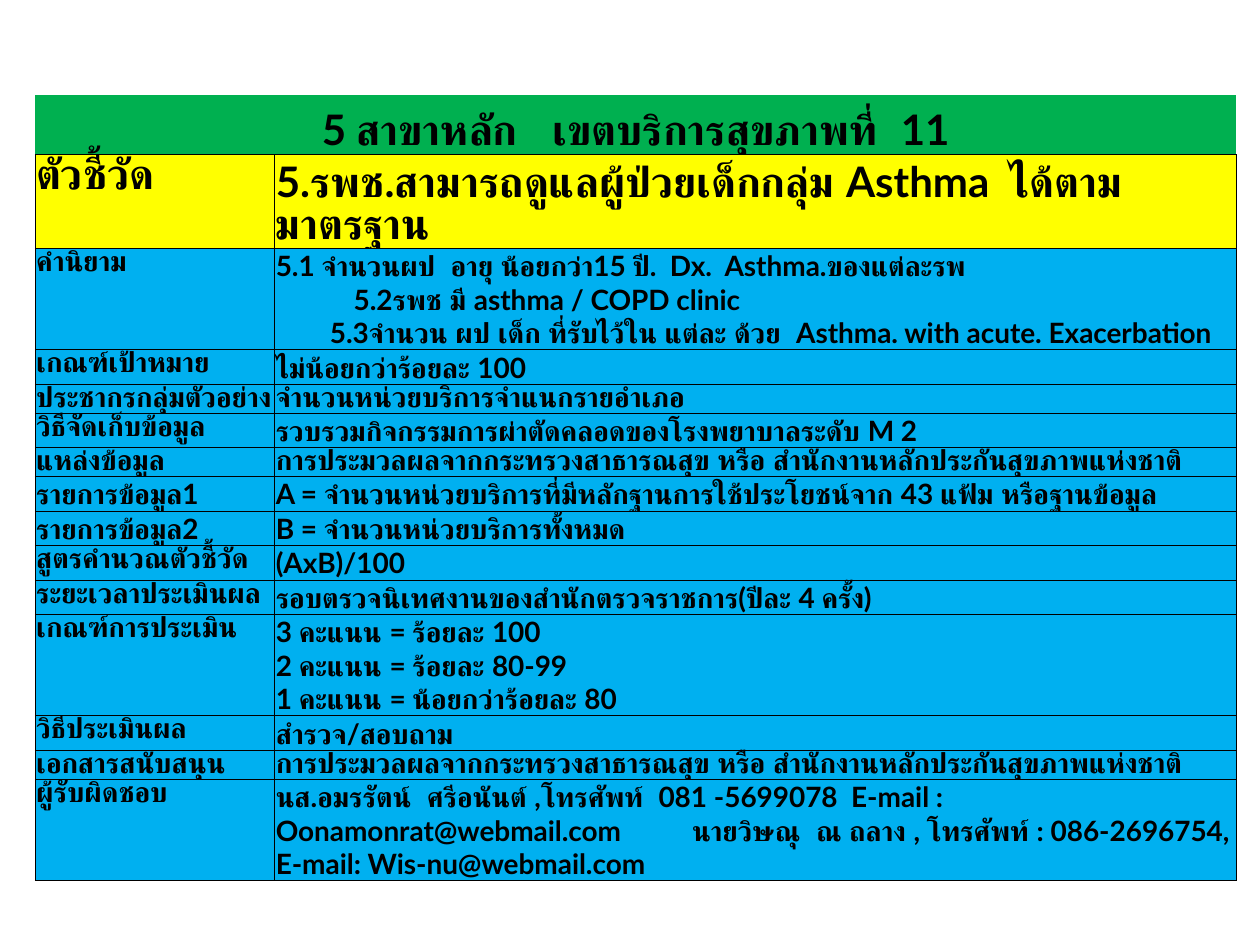
import pptx
import pptx.dml.color
import pptx.enum.text
import pptx.util
from lxml import etree
from pptx.oxml.ns import qn
from pptx.util import Cm, Pt

TITLE = "5 สาขาหลัก   เขตบริการสุขภาพที่  11"
SOURCE = "การประมวลผลจากกระทรวงสาธารณสุข หรือ สำนักงานหลักประกันสุขภาพแห่งชาติ"
GREEN, YELLOW, BLUE = "00B050", "FFFF00", "00B0F0"

# Label, lines of text, row height in cm
ROWS = [
    ("ตัวชี้วัด", ["5.รพช.สามารถดูแลผู้ป่วยเด็กกลุ่ม Asthma  ได้ตามมาตรฐาน"], 1.42),
    ("คำนิยาม", ["5.1 จำนวนผป  อายุ น้อยกว่า15 ปี.  Dx.  Asthma.ของแต่ละรพ",
                 "5.2รพช มี asthma / COPD clinic",
                 "5.3จำนวน ผป เด็ก ที่รับไว้ใน แต่ละ ด้วย  Asthma. with acute. Exacerbation"], 1.7),
    ("เกณฑ์เป้าหมาย", ["ไม่น้อยกว่าร้อยละ 100"], 0.56),
    ("ประชากรกลุ่มตัวอย่าง", ["จำนวนหน่วยบริการจำแนกรายอำเภอ"], 0.56),
    ("วิธีจัดเก็บข้อมูล", ["รวบรวมกิจกรรมการผ่าตัดคลอดของโรงพยาบาลระดับ M 2"], 0.56),
    ("แหล่งข้อมูล", [SOURCE], 0.56),
    ("รายการข้อมูล1", ["A = จำนวนหน่วยบริการที่มีหลักฐานการใช้ประโยชน์จาก 43 แฟ้ม หรือฐานข้อมูล"], 0.56),
    ("รายการข้อมูล2", ["B = จำนวนหน่วยบริการทั้งหมด"], 0.56),
    ("สูตรคำนวณตัวชี้วัด", ["(AxB)/100"], 0.56),
    ("ระยะเวลาประเมินผล", ["รอบตรวจนิเทศงานของสำนักตรวจราชการ(ปีละ 4 ครั้ง)"], 0.56),
    ("เกณฑ์การประเมิน", ["3 คะแนน = ร้อยละ 100", "2 คะแนน = ร้อยละ 80-99",
                         "1 คะแนน = น้อยกว่าร้อยละ 80"], 1.7),
    ("วิธีประเมินผล", ["สำรวจ/สอบถาม"], 0.56),
    ("เอกสารสนับสนุน", [SOURCE], 0.56),
    ("ผู้รับผิดชอบ", ["นส.อมรรัตน์  ศรีอนันต์ ,โทรศัพท์  081 -5699078  E-mail : "
                      "Oonamonrat@webmail.com\tนายวิษณุ  ณ ถลาง , โทรศัพท์ : 086-2696754, "
                      "E-mail: Wis-nu@webmail.com"], 1.37),
]
DEFINITION_INDENTS = {1: 1.57, 2: 1.09}
CONTACT_TAB = 8.39


def color(value):
    return pptx.dml.color.RGBColor.from_string(value)


class IndicatorSlide:
    font = "Lato"
    ink = "000000"
    border = Pt(0.5)

    def __init__(self, deck):
        self.page = deck.slides.add_slide(deck.slide_layouts[6])

    def table(self, left, top, widths, heights):
        frame = self.page.shapes.add_table(
            len(heights), len(widths), Cm(left), Cm(top), Cm(sum(widths)), Cm(sum(heights)))
        table = frame.table
        table.first_row = table.horz_banding = False
        for column, width in zip(table.columns, widths):
            column.width = Cm(width)
        for row, height in zip(table.rows, heights):
            row.height = Cm(height)
        return table

    def cell(self, cell, lines, fill, size, sides="LRTB"):
        cell.fill.solid()
        cell.fill.fore_color.rgb = color(fill)
        cell.margin_left = cell.margin_right = cell.margin_top = Cm(0.02)
        cell.margin_bottom = 0
        self.borders(cell, sides)
        cell.text_frame.text = "\n".join(lines)
        for para in cell.text_frame.paragraphs:
            if "\t" in para.text:
                self.tab_stop(para, CONTACT_TAB)
            para.font.name = self.font
            para.font.size = Pt(size)
            para.font.bold = True
            para.font.color.rgb = color(self.ink)

    def borders(self, cell, sides):
        properties = cell._tc.get_or_add_tcPr()
        for index, side in enumerate("LRTB"):
            line = etree.Element(qn(f"a:ln{side}"), w=str(self.border))
            if side in sides:
                paint = etree.SubElement(line, qn("a:solidFill"))
                etree.SubElement(paint, qn("a:srgbClr"), val=self.ink)
            else:
                etree.SubElement(line, qn("a:noFill"))
            properties.insert(index, line)

    def tab_stop(self, para, position):
        tabs = etree.SubElement(para._p.get_or_add_pPr(), qn("a:tabLst"))
        etree.SubElement(tabs, qn("a:tab"), pos=str(Cm(position)), algn="l")

    def indent(self, para, distance):
        para._p.get_or_add_pPr().set("marL", str(Cm(distance)))


def main():
    deck = pptx.Presentation()
    deck.slide_width, deck.slide_height = Cm(25.4), Cm(19.05)
    slide = IndicatorSlide(deck)
    table = slide.table(0.71, 1.92, [4.83, 19.38], [1.2] + [row[2] for row in ROWS])

    # Title row
    title = table.cell(0, 0)
    title.merge(table.cell(0, 1))
    slide.cell(title, [TITLE], GREEN, 24, sides="B")
    slide.borders(table.cell(0, 1), "B")
    title.vertical_anchor = pptx.enum.text.MSO_ANCHOR.BOTTOM
    title.text_frame.paragraphs[0].alignment = pptx.enum.text.PP_ALIGN.CENTER

    # Indicator row, then its details
    for number, (label, lines, _) in enumerate(ROWS, start=1):
        fill, size = (YELLOW, 24) if number == 1 else (BLUE, 16)
        slide.cell(table.cell(number, 0), [label], fill, size)
        slide.cell(table.cell(number, 1), lines, fill, size)

    # Stepped lines of the definition
    definition = table.cell(2, 1).text_frame.paragraphs
    for index, distance in DEFINITION_INDENTS.items():
        slide.indent(definition[index], distance)

    deck.save("out.pptx")


if __name__ == "__main__":
    main()
